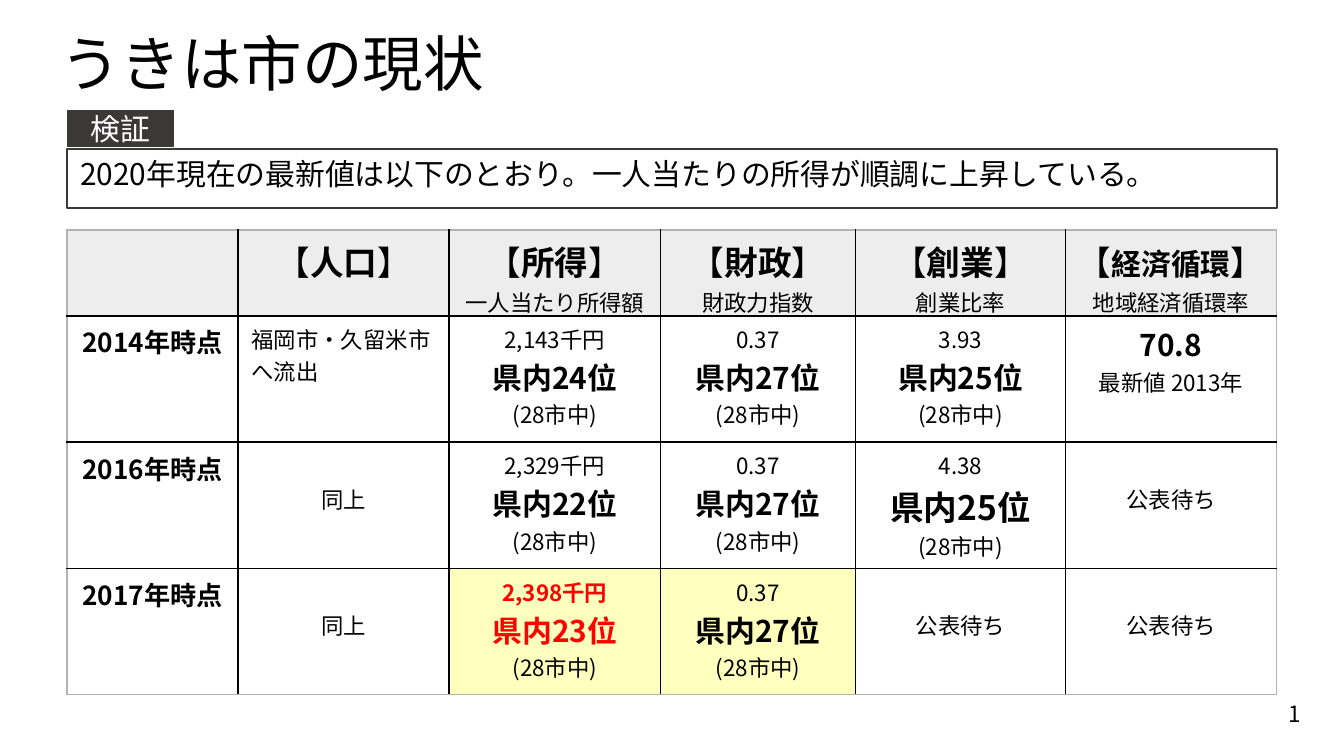
from pptx import Presentation
from pptx.dml.color import RGBColor
from pptx.enum.shapes import MSO_SHAPE
from pptx.enum.text import MSO_ANCHOR, PP_ALIGN
from pptx.oxml.ns import qn
from pptx.util import Inches, Pt
from lxml.etree import SubElement

WIDTH, HEIGHT = 10, 10 * 9 / 16
FONT = "Noto Sans CJK JP"
BLACK, WHITE, CHARCOAL, RED = "000000", "FFFFFF", "3B3838", "FF0000"
HEADER_FILL, LATEST_FILL, FRAME = "EDEDED", "FFFFBE", "B2B2B2"
COLUMNS = [1.27, 1.57, 1.57, 1.45, 1.56, 1.57]
ROWS = [0.64, 0.94, 0.94, 0.94]
TOPICS = [("人口", "", 18), ("所得", "一人当たり所得額", 18), ("財政", "財政力指数", 18),
          ("創業", "創業比率", 18), ("経済循環", "地域経済循環率", 16)]


def color(hex_value):
    """Turn a hex string into a colour."""
    return RGBColor.from_string(hex_value)


def share(left, top, width, height):
    """Turn percentages of the slide into a box."""
    return (Inches(left * WIDTH / 100), Inches(top * HEIGHT / 100),
            Inches(width * WIDTH / 100), Inches(height * HEIGHT / 100))


def write(frame, lines, align=PP_ALIGN.CENTER):
    """Write lines, each a list of (text, size, bold, colour) runs."""
    frame.word_wrap = True
    for index, runs in enumerate(lines):
        paragraph = frame.paragraphs[0] if index == 0 else frame.add_paragraph()
        paragraph.alignment = align
        for text, size, bold, ink in runs:
            run = paragraph.add_run()
            run.text = text
            run.font.size, run.font.bold, run.font.name = Pt(size), bold, FONT
            run.font.color.rgb = color(ink)
            SubElement(run.font._element, qn("a:ea"), typeface=FONT)


def add_caption(slide, box, text, size, align):
    """Place a middle-anchored line of text in the box."""
    frame = slide.shapes.add_textbox(*box).text_frame
    frame.vertical_anchor = MSO_ANCHOR.MIDDLE
    write(frame, [[(text, size, False, BLACK)]], align)


def add_panel(slide, box, text, ink, fill, line_width):
    """Place an outlined rectangle with one line of text."""
    panel = slide.shapes.add_shape(MSO_SHAPE.RECTANGLE, *box)
    panel.shadow.inherit = False
    panel.line.color.rgb = color(CHARCOAL)
    panel.line.width = Pt(line_width)
    frame = panel.text_frame
    frame.vertical_anchor = MSO_ANCHOR.TOP
    if fill:
        panel.fill.solid()
        panel.fill.fore_color.rgb = color(fill)
        frame.margin_left = frame.margin_right = frame.margin_top = frame.margin_bottom = 0
    else:
        panel.fill.background()
    write(frame, [[(text, 16, False, ink)]], PP_ALIGN.CENTER if fill else PP_ALIGN.LEFT)


def heading(topic, measure, size):
    """Return the lines of a bracketed column heading."""
    lines = [[("【", 18, False, BLACK), (topic, size, True, BLACK), ("】", 18, False, BLACK)]]
    return lines + [[(measure, 12, False, BLACK)]] if measure else lines


def ranking(value, rank, size=16, ink=BLACK):
    """Return the lines of a value with its rank among the cities."""
    return [[(value, 12, ink != BLACK, ink)], [(f"県内{rank}位", size, True, ink)],
            [("(28市中)", 12, False, BLACK)]]


def remark(text):
    """Return one plain line."""
    return [[(text, 12, False, BLACK)]]


def year(number):
    """Return the label of a table row."""
    return [[(f"{number}年時点", 14, True, BLACK)]]


def set_borders(cell, row, column):
    """Draw inner rules in black and the outer frame in grey."""
    outer = {"L": column == 0, "R": column == len(COLUMNS) - 1,
             "T": row == 0, "B": row == len(ROWS) - 1}
    properties = cell._tc.get_or_add_tcPr()
    for position, (side, is_outer) in enumerate(outer.items()):
        rule = properties.makeelement(qn(f"a:ln{side}"), {"w": str(Pt(1))})
        fill = SubElement(rule, qn("a:solidFill"))
        SubElement(fill, qn("a:srgbClr"), val=FRAME if is_outer else BLACK)
        properties.insert(position, rule)


def add_indicators(slide, box):
    """Place the table of indicators by year."""
    same, pending = remark("同上"), remark("公表待ち")
    content = [
        [[]] + [heading(*topic) for topic in TOPICS],
        [year(2014), remark("福岡市・久留米市へ流出"), ranking("2,143千円", 24),
         ranking("0.37", 27), ranking("3.93", 25),
         [[("70.8", 16, True, BLACK)]] + remark("最新値 2013年")],
        [year(2016), same, ranking("2,329千円", 22), ranking("0.37", 27),
         ranking("4.38", 25, 18), pending],
        [year(2017), same, ranking("2,398千円", 23, ink=RED), ranking("0.37", 27),
         pending, pending],
    ]
    table = slide.shapes.add_table(len(ROWS), len(COLUMNS), *box).table
    table.first_row = table.horz_banding = False
    for column, weight in zip(table.columns, COLUMNS):
        column.width = int(box[2] * weight / sum(COLUMNS))
    for row, weight in zip(table.rows, ROWS):
        row.height = int(box[3] * weight / sum(ROWS))
    for r, row_content in enumerate(content):
        for c, lines in enumerate(row_content):
            cell = table.cell(r, c)
            lowered = lines in (same, pending)
            cell.margin_top, cell.margin_bottom = Inches(0.3 if lowered else 0.05), 0
            if r == 0:
                cell.margin_left = cell.margin_right = Inches(0.03)
            fill = HEADER_FILL if r == 0 else LATEST_FILL if r == 3 and c in (2, 3) else None
            if fill:
                cell.fill.solid()
                cell.fill.fore_color.rgb = color(fill)
            else:
                cell.fill.background()
            set_borders(cell, r, c)
            write(cell.text_frame, lines,
                  PP_ALIGN.LEFT if (r, c) == (1, 1) else PP_ALIGN.CENTER)


def main():
    """Build the slide and save it."""
    deck = Presentation()
    deck.slide_width, deck.slide_height = Inches(WIDTH), Inches(HEIGHT)
    slide = deck.slides.add_slide(deck.slide_layouts[6])
    add_caption(slide, share(3.5, 5.2, 90, 6), "うきは市の現状", 32.4, PP_ALIGN.LEFT)
    add_panel(slide, share(5, 14.6, 7.9, 4.8), "検証", WHITE, CHARCOAL, 0.75)
    add_panel(slide, share(5, 19.7, 90, 7.8),
              "2020年現在の最新値は以下のとおり。一人当たりの所得が順調に上昇している。",
              BLACK, None, 1)
    add_indicators(slide, share(5, 30.4, 90, 61.5))
    add_caption(slide, share(76.8, 91.7, 21, 5.3), "1", 12, PP_ALIGN.RIGHT)
    deck.save("out.pptx")


if __name__ == "__main__":
    main()
